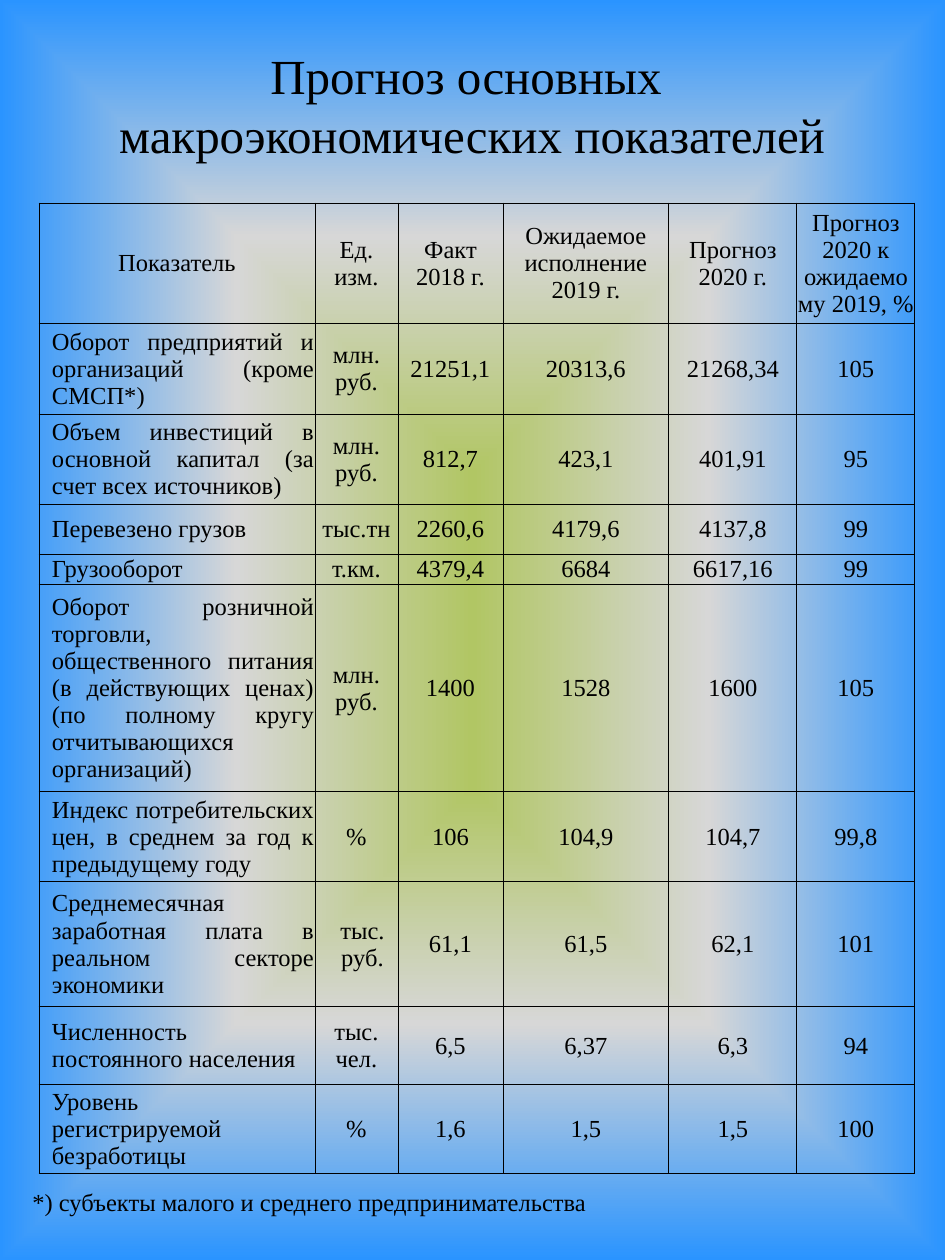
import pptx
import pptx.util
import pptx.oxml
import pptx.dml.color
import pptx.enum.text

# Content
TITLE = ["Прогноз основных ", "макроэкономических показателей"]
FOOTNOTE = "*) субъекты малого и среднего предпринимательства"
HEADER = ("Показатель", "Ед. изм.", "Факт 2018 г.", "Ожидаемое исполнение 2019 г.",
          "Прогноз 2020 г.", "Прогноз 2020 к ожидаемому 2019, %")
INDICATORS = [
    ("Оборот предприятий и организаций (кроме СМСП*)",
     "млн. руб.", "21251,1", "20313,6", "21268,34", "105"),
    ("Объем инвестиций в основной капитал (за счет всех источников)",
     "млн. руб.", "812,7", "423,1", "401,91", "95"),
    ("Перевезено грузов", "тыс.тн", "2260,6", "4179,6", "4137,8", "99"),
    ("Грузооборот", "т.км.", "4379,4", "6684", "6617,16", "99"),
    ("Оборот розничной торговли, общественного питания (в действующих ценах) "
     "(по полному кругу отчитывающихся организаций)",
     "млн. руб.", "1400", "1528", "1600", "105"),
    ("Индекс потребительских цен, в среднем за год к предыдущему году",
     "%", "106", "104,9", "104,7", "99,8"),
    ("Среднемесячная заработная плата в реальном секторе экономики",
     "тыс.\nруб.", "61,1", "61,5", "62,1", "101"),
    ("Численность постоянного населения", "тыс.\nчел.", "6,5", "6,37", "6,3", "94"),
    ("Уровень регистрируемой безработицы", "%", "1,6", "1,5", "1,5", "100"),
]
COLUMN_WIDTHS = [276, 83, 105, 166, 128, 118]
ROW_HEIGHTS = [120, 91, 90, 50, 30, 207, 90, 125, 78, 89]
LEFT_ALIGNED_ROWS = (8, 9)
INDENTED_UNIT_ROW = 7
INDENT = 12

COLORS = {"text": "000000", "border": "000000",
          "center": "B1C664", "middle": "D7D7D7", "edge": "2A94FF"}
FONT = "Times New Roman"
NAMESPACE = 'xmlns:a="http://schemas.openxmlformats.org/drawingml/2006/main"'
ALIGN = pptx.enum.text.PP_ALIGN


def px(value):
    return pptx.util.Emu(round(value * 914400 / 126))


def write_text(frame, text, size=14, align=ALIGN.CENTER, indent=0):
    frame.word_wrap = True
    for index, line in enumerate(text.split("\n")):
        paragraph = frame.paragraphs[0] if index == 0 else frame.add_paragraph()
        paragraph.alignment = align
        if indent:
            properties = paragraph._p.get_or_add_pPr()
            properties.set("marL", str(px(indent)))
            properties.set("indent", "0")
        run = paragraph.add_run()
        run.text = line
        run.font.size = pptx.util.Pt(size)
        run.font.name = FONT
        run.font.color.rgb = pptx.dml.color.RGBColor.from_string(COLORS["text"])


def add_text_box(slide, left, top, width, height, text, **text_format):
    box = slide.shapes.add_textbox(px(left), px(top), px(width), px(height))
    write_text(box.text_frame, text, **text_format)


def set_background(slide):
    stops = "".join(
        f'<a:gs pos="{position}"><a:srgbClr val="{COLORS[name]}"/></a:gs>'
        for position, name in ((0, "center"), (50000, "middle"), (100000, "edge")))
    background = pptx.oxml.parse_xml(
        f'<p:bg {NAMESPACE} xmlns:p="http://schemas.openxmlformats.org/presentationml/2006/main">'
        f'<p:bgPr><a:gradFill><a:gsLst>{stops}</a:gsLst><a:path path="shape">'
        '<a:fillToRect l="50000" t="50000" r="50000" b="50000"/></a:path></a:gradFill>'
        '<a:effectLst/></p:bgPr></p:bg>')
    slide._element.cSld.insert(0, background)


def format_cell(cell):
    cell.fill.background()
    cell.vertical_anchor = pptx.enum.text.MSO_ANCHOR.MIDDLE
    cell.margin_left = cell.margin_right = cell.margin_top = px(1)
    cell.margin_bottom = 0
    properties = cell._tc.get_or_add_tcPr()
    for index, side in enumerate("LRTB"):
        properties.insert(index, pptx.oxml.parse_xml(
            f'<a:ln{side} {NAMESPACE} w="6350"><a:solidFill>'
            f'<a:srgbClr val="{COLORS["border"]}"/></a:solidFill></a:ln{side}>'))


def add_indicator_table(slide, left, top):
    rows = [HEADER] + INDICATORS
    table = slide.shapes.add_table(
        len(rows), len(HEADER), px(left), px(top),
        px(sum(COLUMN_WIDTHS)), px(sum(ROW_HEIGHTS))).table
    table.first_row = table.horz_banding = False
    for column, width in zip(table.columns, COLUMN_WIDTHS):
        column.width = px(width)
    for row, height in zip(table.rows, ROW_HEIGHTS):
        row.height = px(height)
    for row, values in enumerate(rows):
        for column, value in enumerate(values):
            cell = table.cell(row, column)
            format_cell(cell)
            is_name = row > 0 and column == 0
            align = ALIGN.CENTER
            if is_name:
                align = ALIGN.LEFT if row in LEFT_ALIGNED_ROWS else ALIGN.JUSTIFY
            indented = is_name or (row, column) == (INDENTED_UNIT_ROW, 1)
            write_text(cell.text_frame, value, align=align,
                       indent=INDENT if indented else 0)


def main():
    presentation = pptx.Presentation()
    presentation.slide_width, presentation.slide_height = px(945), px(1260)
    slide = presentation.slides.add_slide(presentation.slide_layouts[6])
    set_background(slide)
    # Title, table and footnote, from top to bottom
    add_text_box(slide, 29, 39, 886, 131, "\n".join(TITLE), size=28)
    add_indicator_table(slide, 39, 203)
    add_text_box(slide, 20, 1181, 886, 43, FOOTNOTE, align=ALIGN.LEFT)
    presentation.save("out.pptx")


if __name__ == "__main__":
    main()
